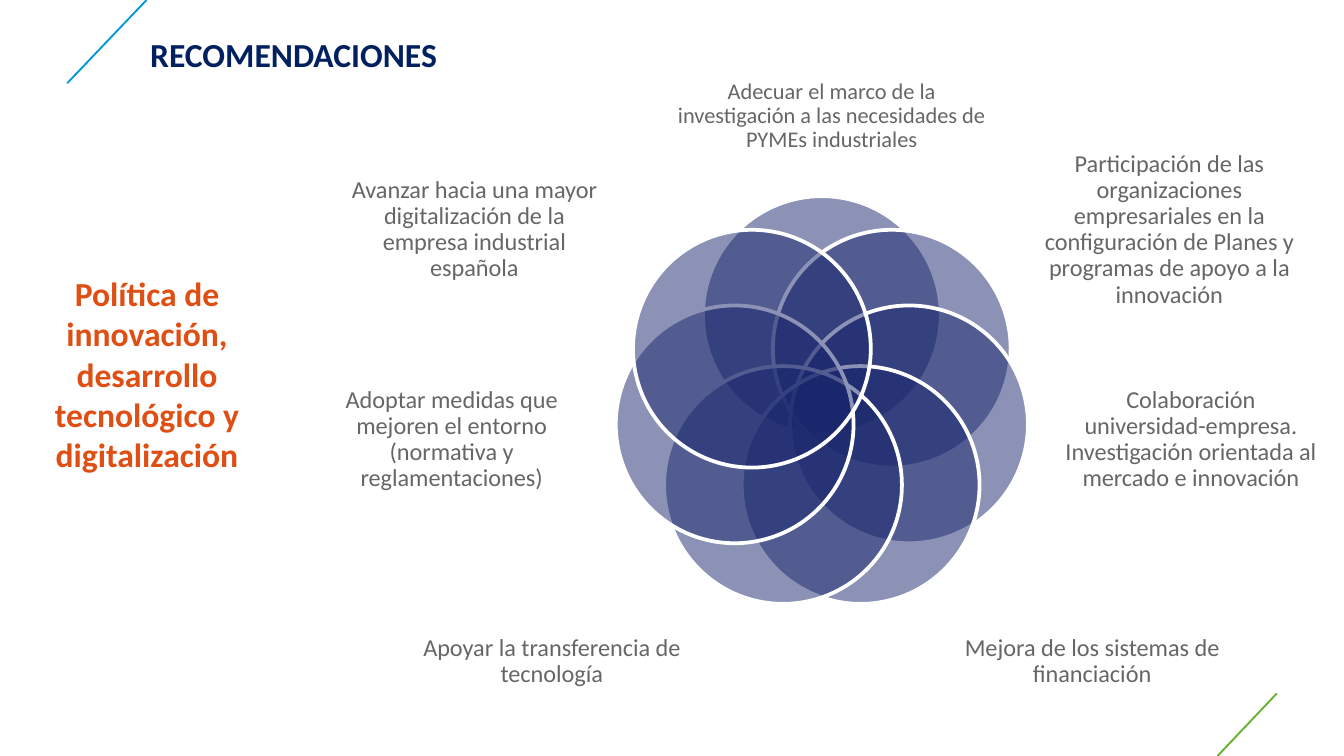
"""Build the recommendations slide with a ring of seven overlapping circles."""
from math import cos, pi, sin

from lxml import etree
from pptx import Presentation
from pptx.dml.color import RGBColor
from pptx.enum.shapes import MSO_CONNECTOR, MSO_SHAPE
from pptx.enum.text import MSO_ANCHOR, PP_ALIGN
from pptx.oxml.ns import qn
from pptx.util import Pt

STRAIGHT = MSO_CONNECTOR.STRAIGHT
OVAL = MSO_SHAPE.OVAL
MIDDLE, TOP = MSO_ANCHOR.MIDDLE, MSO_ANCHOR.TOP
CENTER = PP_ALIGN.CENTER

FONT = "Calibri"
NAVY, ORANGE, GRAY = "002060", "DF4E13", "666666"
PETAL, WHITE = "1A276D", "FFFFFF"

TITLE = ("RECOMENDACIONES", (59, 14.4, 196.6, 36))
TOPIC = ("Política de innovación, desarrollo tecnológico y digitalización",
         (-5.8, 142.6, 169.2, 116.6))
ACCENTS = [((36, 44.6), (78.5, 0), "0097D7"), ((652.3, 405), (684, 371.5), "62B22F")]

# Clockwise from the top: text, size, (left, top, width, height)
RECOMMENDATIONS = [
    ("Adecuar el marco de la investigación a las necesidades de PYMEs industriales",
     12, (357.8, 23, 175.7, 78.5)),
    ("Participación de las organizaciones empresariales en la configuración de Planes "
     "y programas de apoyo a la innovación", 13, (557.3, 79.9, 138.2, 86.4)),
    ("Colaboración universidad-empresa. Investigación orientada al mercado e innovación",
     13, (570.2, 189.4, 135.4, 92.2)),
    ("Mejora de los sistemas de financiación", 13, (511.9, 312.5, 146.2, 84.2)),
    ("Apoyar la transferencia de tecnología", 13, (222.5, 312.5, 146.2, 84.2)),
    ("Adoptar medidas que mejoren el entorno (normativa y reglamentaciones)",
     13, (174.2, 189.4, 135.4, 92.2)),
    ("Avanzar hacia una mayor digitalización de la empresa industrial española",
     13, (185, 79.9, 138.2, 86.4)),
]
RING_X, RING_Y, RING_RADIUS, DIAMETER = 440.3, 216.7, 47.9, 127.4


def color(value):
    return RGBColor.from_string(value)


def add_text(page, text, bounds, size, ink, bold=False, anchor=TOP):
    box = page.shapes.add_textbox(*map(Pt, bounds))
    frame = box.text_frame
    frame.word_wrap = True
    frame.vertical_anchor = anchor
    paragraph = frame.paragraphs[0]
    paragraph.text = text
    paragraph.alignment = CENTER
    font = paragraph.font
    font.name, font.size, font.bold = FONT, Pt(size), bold
    font.color.rgb = color(ink)
    return frame


def add_accent(page, start, end, ink):
    line = page.shapes.add_connector(STRAIGHT, *map(Pt, start + end))
    line.line.color.rgb = color(ink)
    line.line.width = Pt(1)
    etree.SubElement(line._element.spPr, qn("a:effectLst"))


def add_petal(page, index):
    angle = 2 * pi * index / len(RECOMMENDATIONS)
    left = RING_X + RING_RADIUS * sin(angle) - DIAMETER / 2
    top = RING_Y - RING_RADIUS * cos(angle) - DIAMETER / 2
    petal = page.shapes.add_shape(OVAL, Pt(left), Pt(top), Pt(DIAMETER), Pt(DIAMETER))
    petal.shadow.inherit = False
    petal.fill.solid()
    petal.fill.fore_color.rgb = color(PETAL)
    fill = petal._element.spPr.find(qn("a:solidFill"))
    etree.SubElement(fill[0], qn("a:alpha"), val="50000")
    petal.line.color.rgb = color(WHITE)
    petal.line.width = Pt(2)


def add_recommendation(page, text, size, bounds):
    frame = add_text(page, text, bounds, size, GRAY, anchor=MIDDLE)
    frame.margin_left = frame.margin_right = frame.margin_top = frame.margin_bottom = 0
    frame.paragraphs[0].line_spacing = 0.9


def main():
    deck = Presentation()
    deck.slide_width, deck.slide_height = Pt(720), Pt(405)
    page = deck.slides.add_slide(deck.slide_layouts[6])
    for accent in ACCENTS:
        add_accent(page, *accent)
    add_text(page, *TITLE, 18, NAVY, bold=True)
    for index, recommendation in enumerate(RECOMMENDATIONS):
        add_petal(page, index)
        add_recommendation(page, *recommendation)
    add_text(page, *TOPIC, 18, ORANGE, bold=True)
    deck.save("out.pptx")


if __name__ == "__main__":
    main()
